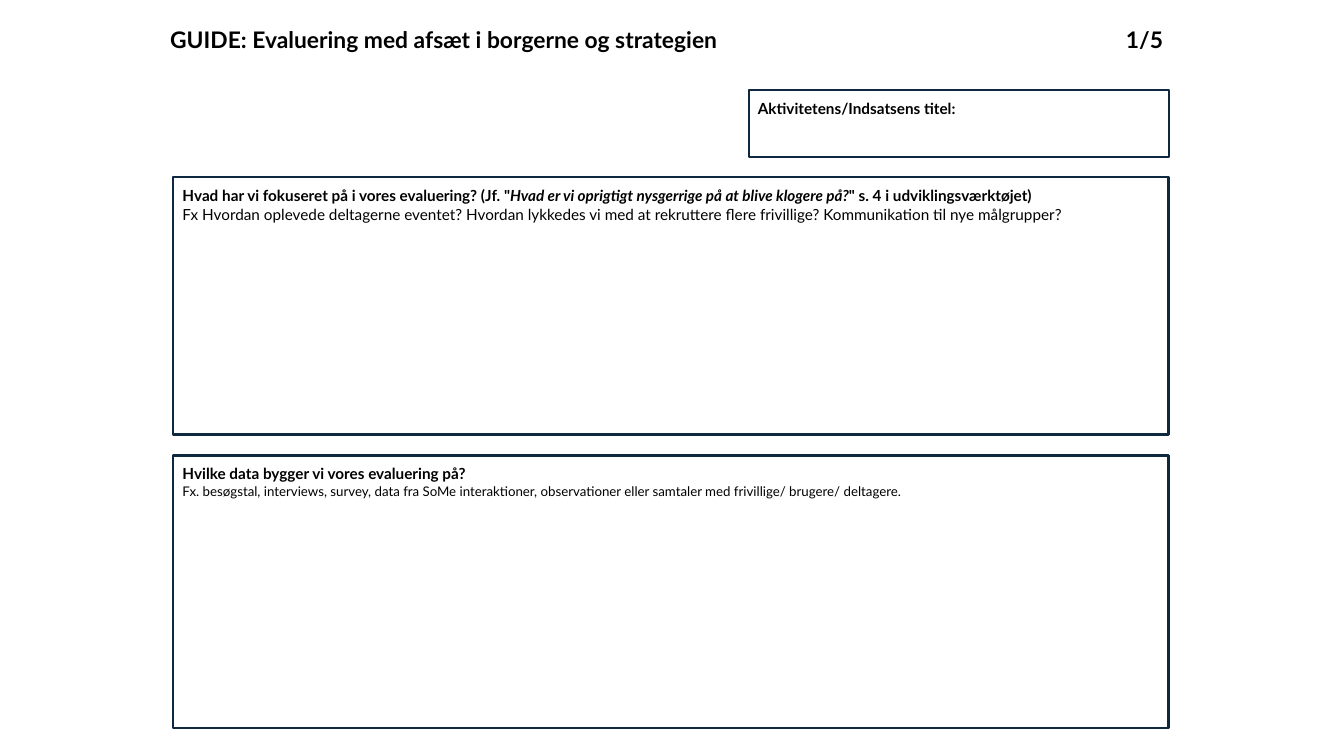
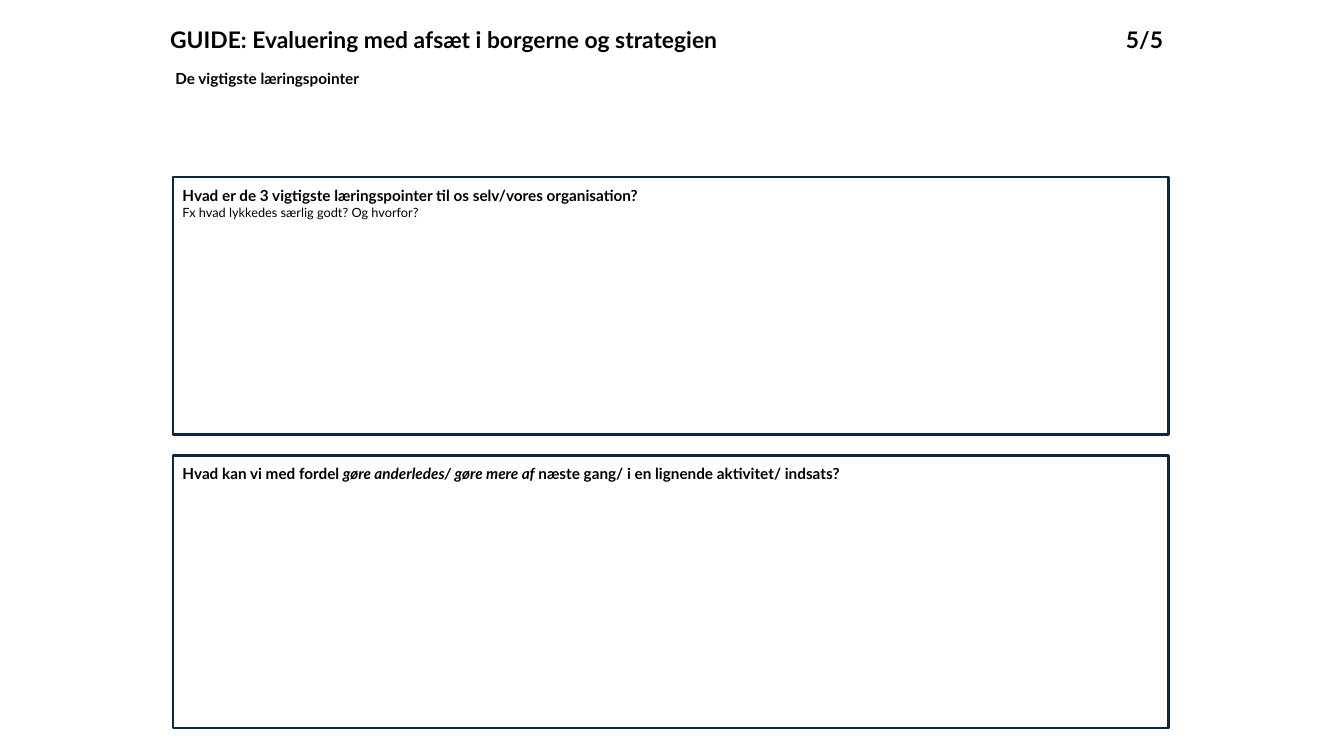
from dataclasses import dataclass

import pptx
import pptx.dml.color
import pptx.enum.shapes
import pptx.enum.text
import pptx.util

Cm = pptx.util.Cm
Pt = pptx.util.Pt
RGBColor = pptx.dml.color.RGBColor
Align = pptx.enum.text.PP_ALIGN
Anchor = pptx.enum.text.MSO_ANCHOR


@dataclass(frozen=True)
class Theme:
    font: str = "Lato"
    ink: RGBColor = RGBColor(0x00, 0x00, 0x00)
    frame: RGBColor = RGBColor(0x0E, 0x28, 0x41)
    frame_width: float = 1.5
    title_size: float = 16.3
    body_size: float = 10.9
    hint_size: float = 9.5
    small_hint_size: float = 9.1
    inset: float = 0.23
    title_inset: float = 0.3


@dataclass(frozen=True)
class Line:
    """One paragraph; spans at odd positions are italic."""
    spans: tuple
    size: float
    bold: bool = True


THEME = Theme()
GUIDE_TITLE = "GUIDE: Evaluering med afsæt i borgerne og strategien"
PAGE_COUNT = 5

# Left, top, width and height in centimetres
TITLE_BOX = (3.99, 0.41, 22.38, 1.17)
NUMBER_BOX = (27.13, 0.41, 2.41, 1.17)
SUBTITLE_BOX = (4.19, 1.52, 11.38, 2.44)
ACTIVITY_BOX = (18.87, 2.26, 10.59, 1.7)
UPPER_BOX = (4.37, 4.47, 25.08, 6.48)
LOWER_BOX = (4.37, 11.48, 25.08, 6.86)


def heading(*spans):
    return Line(spans, THEME.body_size)


def hint(text, size):
    return Line((text,), size, bold=False)


def write_lines(shape, lines, inset=THEME.inset, align=Align.LEFT, anchor=Anchor.TOP):
    frame = shape.text_frame
    frame.word_wrap = True
    frame.vertical_anchor = anchor
    frame.margin_left = frame.margin_right = Cm(inset)
    frame.margin_top = frame.margin_bottom = Cm(inset)
    for index, line in enumerate(lines):
        para = frame.add_paragraph() if index else frame.paragraphs[0]
        para.alignment = align
        para.font.name = THEME.font
        para.font.size = Pt(line.size)
        para.font.bold = line.bold
        para.font.color.rgb = THEME.ink
        for position, text in enumerate(line.spans):
            span = para.add_run()
            span.text = text
            if position % 2:
                span.font.italic = True


def add_label(page, box, lines, **style):
    shape = page.shapes.add_textbox(*map(Cm, box))
    write_lines(shape, lines, **style)


def add_answer_field(page, box, lines):
    """Draw an outlined field with its question at the top."""
    shape = page.shapes.add_shape(
        pptx.enum.shapes.MSO_SHAPE.RECTANGLE, *map(Cm, box))
    shape.shadow.inherit = False
    shape.fill.background()
    shape.line.color.rgb = THEME.frame
    shape.line.width = Pt(THEME.frame_width)
    write_lines(shape, lines)


def add_guide_page(deck, number, upper_lines, lower_lines):
    """Add a page with the shared header and two answer fields."""
    page = deck.slides.add_slide(deck.slide_layouts[6])
    add_label(page, TITLE_BOX, [Line((GUIDE_TITLE,), THEME.title_size)],
              inset=THEME.title_inset, anchor=Anchor.MIDDLE)
    add_label(page, NUMBER_BOX,
              [Line((f"{number}/{PAGE_COUNT}",), THEME.title_size)],
              align=Align.RIGHT)
    add_answer_field(page, UPPER_BOX, upper_lines)
    add_answer_field(page, LOWER_BOX, lower_lines)
    return page


def add_focus_page(deck):
    page = add_guide_page(
        deck, 1,
        [heading("Hvad har vi fokuseret på i vores evaluering? (Jf. \"",
                 "Hvad er vi oprigtigt nysgerrige på at blive klogere på?",
                 "\" s. 4 i udviklingsværktøjet)"),
         hint("Fx Hvordan oplevede deltagerne eventet? Hvordan lykkedes vi med "
              "at rekruttere flere frivillige? Kommunikation til nye målgrupper?",
              THEME.body_size)],
        [heading("Hvilke data bygger vi vores evaluering på?"),
         hint("Fx. besøgstal, interviews, survey, data fra SoMe interaktioner, "
              "observationer eller samtaler med frivillige/ brugere/ deltagere.",
              THEME.hint_size)])
    add_answer_field(page, ACTIVITY_BOX, [heading("Aktivitetens/Indsatsens titel:")])


def add_learning_page(deck):
    page = add_guide_page(
        deck, 5,
        [heading("Hvad er de 3 vigtigste læringspointer til os selv/vores organisation?"),
         hint("Fx hvad lykkedes særlig godt? Og hvorfor?", THEME.small_hint_size)],
        [heading("Hvad kan vi med fordel ", "gøre anderledes/ gøre mere af",
                 " næste gang/ i en lignende aktivitet/ indsats?")])
    add_label(page, SUBTITLE_BOX, [heading("De vigtigste læringspointer")])


def main():
    deck = pptx.Presentation()
    deck.slide_width, deck.slide_height = Cm(33.87), Cm(19.05)
    add_focus_page(deck)
    add_learning_page(deck)
    deck.save("out.pptx")


if __name__ == "__main__":
    main()
